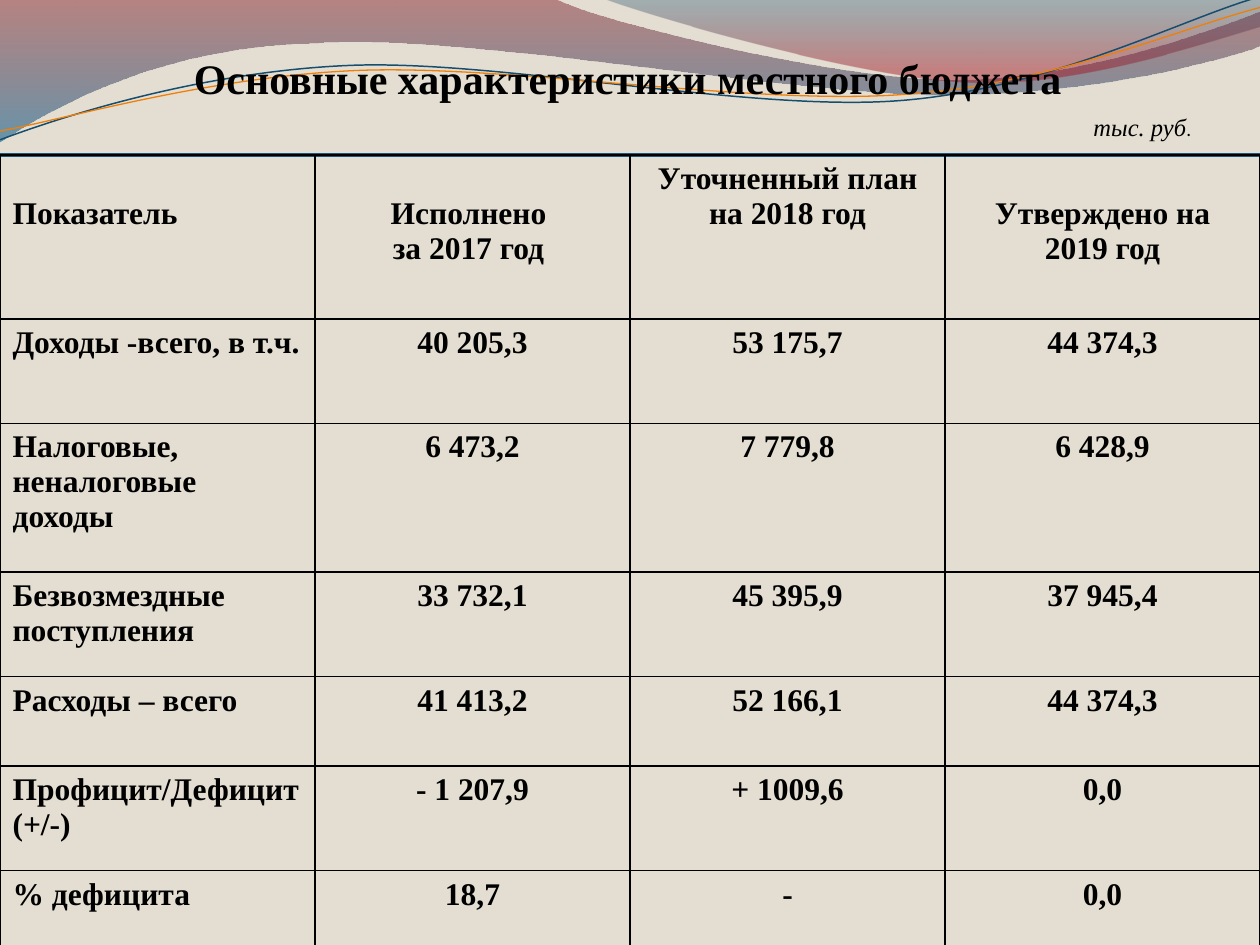
from lxml.etree import SubElement
from pptx import Presentation
from pptx.dml.color import RGBColor
from pptx.enum.shapes import MSO_CONNECTOR
from pptx.enum.text import MSO_AUTO_SIZE, PP_ALIGN
from pptx.oxml.ns import qn
from pptx.util import Inches, Pt

WIDTH, HEIGHT = 10, 7.5
BLACK = RGBColor(0, 0, 0)
BEIGE = RGBColor(0xE3, 0xDE, 0xD1)
DARK_RED = RGBColor(0x7E, 0x16, 0x21)
RED = RGBColor(0xA1, 0x0F, 0x1F)
BLUE = RGBColor(0x00, 0x56, 0x89)
NAVY = RGBColor(0x09, 0x44, 0x67)
STEEL = RGBColor(0x18, 0x4E, 0x6D)
ORANGE = RGBColor(0xF0, 0x7F, 0x09)
RULE_BLUE = RGBColor(0x1B, 0x58, 0x7C)
SERIF, SANS = "Times New Roman", "Calibri"

TITLE = "Основные характеристики местного бюджета"
UNIT = "тыс. руб"
HEADERS = ["Показатель", "Исполнено \nза 2017 год ", "Уточненный план на 2018 год",
           "Утверждено на\n2019 год"]
ROWS = [
    ["Доходы -всего, в т.ч.", "40 205,3", "53 175,7", "44 374,3"],
    ["Налоговые, неналоговые доходы", "6 473,2", "7 779,8", "6 428,9"],
    ["Безвозмездные поступления", "33 732,1", "45 395,9", "37 945,4"],
    ["Расходы – всего", "41 413,2", "52 166,1", "44 374,3"],
    ["Профицит/Дефицит (+/-)", "- 1 207,9", "+ 1009,6", "0,0"],
    ["% дефицита", "18,7", "-", "0,0"],
]
ROW_HEIGHTS = [1.3, 0.83, 1.18, 0.83, 0.71, 0.83, 0.71]
TABLE_TOP = 1.23
CELL_INSET, HEADER_DROP = 0.05, 0.28
LOWERED_HEADERS = {0, 1, 3}

# Each outline is a start point, then segments: 2 numbers for a line, 6 for a curve.
WAVES = [
    ([(0, 0), (4.4, -0.01), (4.76, 0.17, 6.64, 0.63, 7.58, 0.63),
      (8.53, 0.63, 9.58, 0.26, 10, 0.09), (10.01, 0.36),
      (9.83, 0.44, 8.7, 0.76, 7.46, 0.75), (6.22, 0.75, 3.82, 0.28, 2.57, 0.34),
      (1.29, 0.36, 0.46, 0.83, -0.01, 1.13), (0, 0)],
     [(0, DARK_RED, 45), (1, BLUE, 55)]),
    ([(4.79, -0.01), (5.09, 0.11, 6.82, 0.62, 7.69, 0.65),
      (8.56, 0.69, 9.61, 0.32, 10, 0.21), (10, 0), (4.79, -0.01)],
     [(0, NAVY, 30), (0.8, RED, 45)]),
]
STRANDS = [
    ([(0, 1.11), (0.48, 0.93, 1.58, 0.57, 2.77, 0.52),
      (3.95, 0.47, 5.93, 0.89, 7.13, 0.8), (8.33, 0.71, 9.38, 0.15, 9.98, -0.02)],
     STEEL, 0.85),
    ([(0, 1.04), (0.47, 0.96, 1.64, 0.61, 2.83, 0.56),
      (4.03, 0.51, 5.97, 0.84, 7.17, 0.75), (8.36, 0.67, 9.41, 0.21, 10, 0.06)],
     ORANGE, 0.75),
]


def add_outline(slide, outline, close):
    """Build a freeform through all points, then join each curve's three points."""
    points = [(Inches(x), Inches(y)) for segment in outline
              for x, y in zip(segment[::2], segment[1::2])]
    builder = slide.shapes.build_freeform(*points[0])
    builder.add_line_segments(points[1:], close=close)
    shape = builder.convert_to_shape()
    shape.shadow.inherit = False
    lines = iter(list(shape.element.iter(qn("a:lnTo"))))
    for segment in outline[1:]:
        line = next(lines)
        if len(segment) == 6:
            curve = line.makeelement(qn("a:cubicBezTo"))
            line.addprevious(curve)
            for part in (line, next(lines), next(lines)):
                curve.append(part[0])
                part.getparent().remove(part)
    return shape


def add_wave(slide, outline, stops):
    shape = add_outline(slide, outline, True)
    shape.line.fill.background()
    shape.fill.gradient()
    shape.fill.gradient_angle = 270
    for stop, (position, color, _) in zip(shape.fill.gradient_stops, stops):
        stop.position = position
        stop.color.rgb = color
    for color_element, (_, _, opacity) in zip(shape.element.iter(qn("a:srgbClr")), stops):
        SubElement(color_element, qn("a:alpha"), val=str(opacity * 1000))


def add_strand(slide, outline, color, width):
    shape = add_outline(slide, outline, False)
    shape.fill.background()
    shape.line.color.rgb = color
    shape.line.width = Pt(width)


def add_rule(slide):
    rule = slide.shapes.add_connector(MSO_CONNECTOR.STRAIGHT, Inches(WIDTH), Inches(TABLE_TOP),
                                      0, Inches(TABLE_TOP))
    rule.line.color.rgb = RULE_BLUE
    rule.line.width = Pt(2)
    SubElement(rule.element.spPr, qn("a:effectLst"))


def set_font(font, **formats):
    font.color.rgb = BLACK
    for name, value in formats.items():
        setattr(font, name, value)


def add_text(slide, box, runs, wrap):
    shape = slide.shapes.add_textbox(*map(Inches, box))
    frame = shape.text_frame
    frame.word_wrap = wrap
    if not wrap:
        frame.auto_size = MSO_AUTO_SIZE.SHAPE_TO_FIT_TEXT
    for text, formats in runs:
        run = frame.paragraphs[0].add_run()
        run.text = text
        set_font(run.font, **formats)


def set_borders(cell):
    properties = cell._tc.get_or_add_tcPr()
    for side in ("lnL", "lnR", "lnT", "lnB"):
        border = SubElement(properties, qn(f"a:{side}"), w=str(Pt(1)))
        fill = SubElement(border, qn("a:solidFill"))
        SubElement(fill, qn("a:srgbClr"), val=str(BLACK))


def add_budget_table(slide):
    content = [HEADERS, *ROWS]
    table = slide.shapes.add_table(len(content), len(HEADERS), 0, Inches(TABLE_TOP),
                                   Inches(WIDTH), Inches(sum(ROW_HEIGHTS))).table
    table.first_row = table.horz_banding = False
    for row, height in zip(table.rows, ROW_HEIGHTS):
        row.height = Inches(height)
    for row_index, texts in enumerate(content):
        for column_index, text in enumerate(texts):
            cell = table.cell(row_index, column_index)
            set_borders(cell)
            cell.fill.background()
            lowered = row_index == 0 and column_index in LOWERED_HEADERS
            cell.margin_top = Inches(CELL_INSET + HEADER_DROP * lowered)
            cell.text = text
            for paragraph in cell.text_frame.paragraphs:
                paragraph.alignment = PP_ALIGN.CENTER if column_index else PP_ALIGN.LEFT
                set_font(paragraph.runs[0].font, name=SERIF, size=Pt(18), bold=True)


def main():
    presentation = Presentation()
    presentation.slide_width, presentation.slide_height = Inches(WIDTH), Inches(HEIGHT)
    slide = presentation.slides.add_slide(presentation.slide_layouts[6])
    slide.background.fill.solid()
    slide.background.fill.fore_color.rgb = BEIGE
    for wave in WAVES:
        add_wave(slide, *wave)
    for strand in STRANDS:
        add_strand(slide, *strand)
    add_rule(slide)
    add_text(slide, (1.44, 0.37, 7.3, 0.5),
             [(TITLE, dict(name=SERIF, size=Pt(24), bold=True))], False)
    add_budget_table(slide)
    add_text(slide, (8.58, 0.84, 1.42, 0.39),
             [(UNIT, dict(name=SERIF, size=Pt(14), italic=True)),
              (".", dict(name=SANS, size=Pt(11)))], True)
    presentation.save("out.pptx")


if __name__ == "__main__":
    main()
